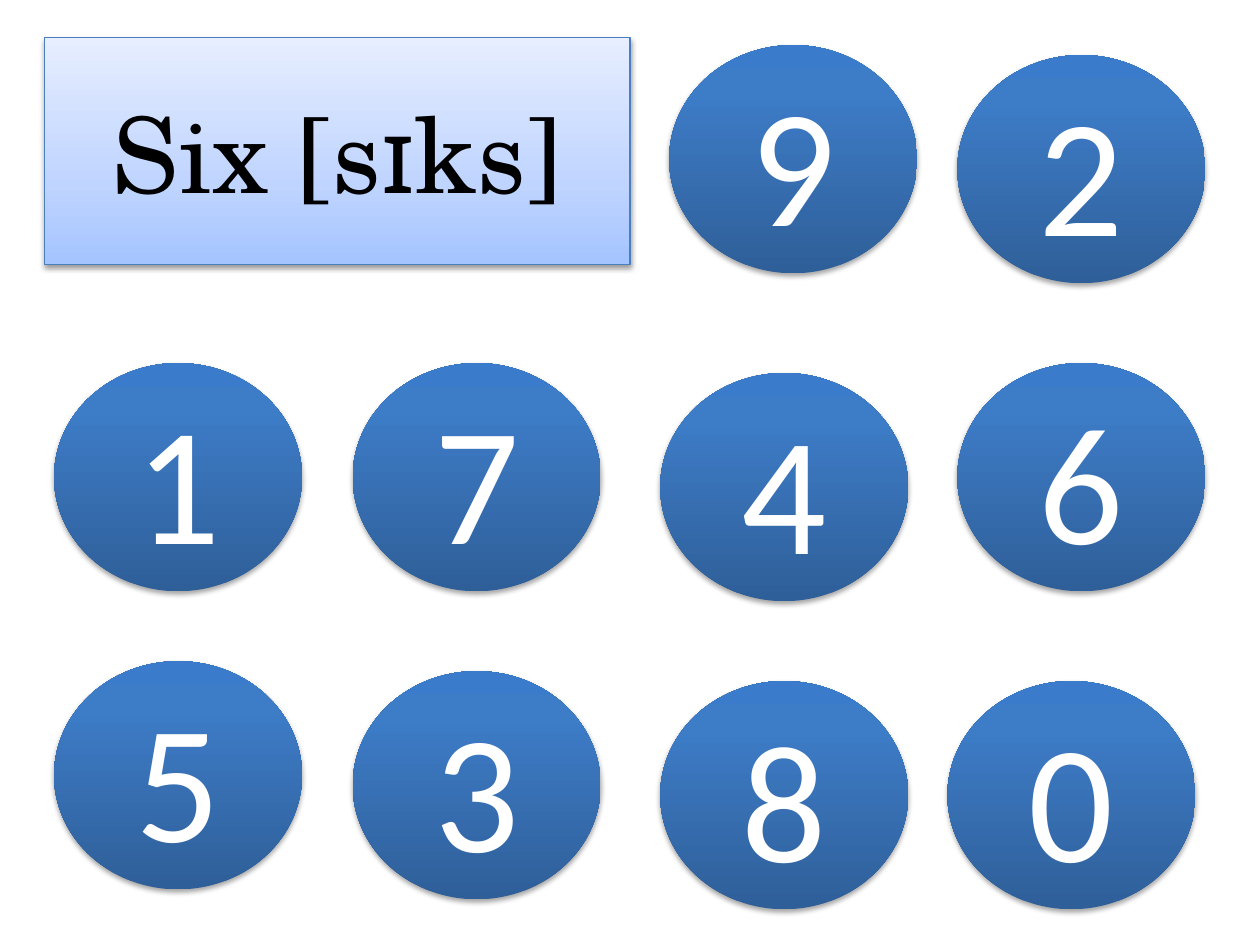
from lxml import etree
from pptx import Presentation
from pptx.dml.color import RGBColor
from pptx.enum.shapes import MSO_SHAPE
from pptx.enum.text import MSO_ANCHOR, MSO_AUTO_SIZE, PP_ALIGN
from pptx.oxml.ns import qn
from pptx.util import Cm, Pt

OVAL = MSO_SHAPE.OVAL
MIDDLE = MSO_ANCHOR.MIDDLE
NO_FIT = MSO_AUTO_SIZE.NONE
CENTER = PP_ALIGN.CENTER
TITLE_ONLY = 5

TITLE_STOPS = [(0, "A4C4FF"), (35, "BFD4FF"), (100, "E6EEFF")]
CIRCLE_STOPS = [(0, "2F5F99"), (80, "3D7CC7"), (100, "3A7CCB")]

# Lengths in cm
TITLE_BOX = (0.89, 0.76, 11.81, 4.57)
CIRCLE_SIZE = (5, 4.6)
COLUMNS = [1.09, 7.11, 13.31, 19.3]
ROWS = [0.91, 7.32, 13.33]
# Each row: column, digit, shift right, shift down
DIGITS = [
    [(2, "9", 0.18, 0), (3, "2", 0, 0.2)],
    [(0, "1", 0, 0), (1, "7", 0, 0), (2, "4", 0, 0.2), (3, "6", 0, 0)],
    [(0, "5", 0, 0), (1, "3", 0, 0.2), (2, "8", 0, 0.4), (3, "0", -0.2, 0.4)],
]


def color(hex_string):
    return RGBColor.from_string(hex_string)


def place(shape, box):
    shape.left, shape.top, shape.width, shape.height = map(Cm, box)


def add_color_node(parent, tag, hex_string, **attributes):
    node = etree.SubElement(parent, qn(tag), **attributes)
    return etree.SubElement(node, qn("a:srgbClr"), val=hex_string)


def fill_upward(shape, stops):
    """Gradient running from the bottom edge to the top."""
    shape.fill.gradient()
    shape.fill.gradient_angle = 90
    stop_list = shape._element.spPr.find(".//" + qn("a:gsLst"))
    for old_stop in list(stop_list):
        stop_list.remove(old_stop)
    for percent, hex_string in stops:
        add_color_node(stop_list, "a:gs", hex_string, pos=str(percent * 1000))


def drop_shadow(shape, distance, opacity):
    shape.shadow.inherit = False
    effects = shape._element.spPr.find(qn("a:effectLst"))
    shade = add_color_node(effects, "a:outerShdw", "000000",
                           blurRad=str(Pt(3.1)), dist=str(Pt(distance)),
                           dir="5400000", rotWithShape="0")
    etree.SubElement(shade, qn("a:alpha"), val=str(opacity * 1000))


def write_centered(shape, text, font_name, size, hex_string):
    frame = shape.text_frame
    frame.text = text
    frame.word_wrap = True
    frame.auto_size = NO_FIT
    frame.vertical_anchor = MIDDLE
    para = frame.paragraphs[0]
    para.alignment = CENTER
    font = para.runs[0].font
    font.name = font_name
    font.size = Pt(size)
    font.color.rgb = color(hex_string)


def format_title(title, box):
    place(title, box)
    fill_upward(title, TITLE_STOPS)
    title.line.color.rgb = color("4B7EBC")
    title.line.width = Pt(0.75)
    drop_shadow(title, 1.6, 38)
    write_centered(title, "Six [sɪks]", "TeX Gyre Schola", 60, "000000")


def add_digit_circle(slide, digit, box):
    circle = slide.shapes.add_shape(OVAL, *map(Cm, box))
    fill_upward(circle, CIRCLE_STOPS)
    circle.line.fill.background()
    drop_shadow(circle, 1.8, 35)
    write_centered(circle, digit, "Calibri", 96, "FFFFFF")


def main():
    deck = Presentation()
    deck.slide_width, deck.slide_height = Cm(25.4), Cm(19.05)
    slide = deck.slides.add_slide(deck.slide_layouts[TITLE_ONLY])

    # Word with its pronunciation
    format_title(slide.shapes.title, TITLE_BOX)

    # Digits to choose from
    for top, row in zip(ROWS, DIGITS):
        for column, digit, right, down in row:
            box = (COLUMNS[column] + right, top + down, *CIRCLE_SIZE)
            add_digit_circle(slide, digit, box)

    deck.save("out.pptx")


if __name__ == "__main__":
    main()
